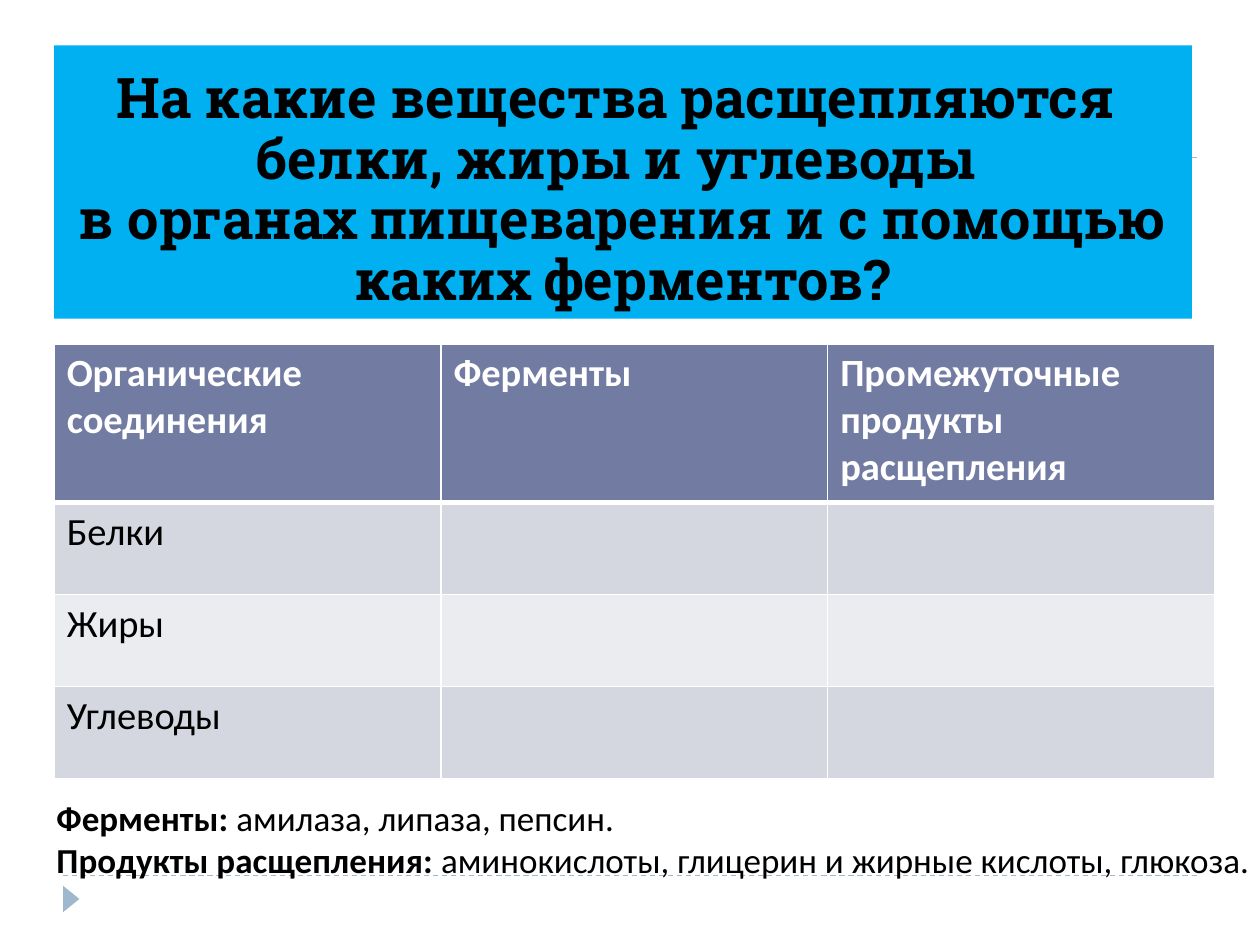
import dataclasses

import lxml.etree
import pptx
import pptx.dml.color
import pptx.enum.dml
import pptx.enum.shapes
import pptx.enum.text
import pptx.oxml.ns
import pptx.util

Inches = pptx.util.Inches
Shapes = pptx.enum.shapes.MSO_SHAPE

COLOURS = {
    "rule": "9FB8CD",
    "title": "00B0F0",
    "header": "727CA3",
    "odd row": "D5D7E0",
    "even row": "EBECF0",
    "white": "FFFFFF",
    "black": "000000",
}
WIDTH, HEIGHT = 10, 7.5
LEFT = 0.43
COLUMN_WIDTH = 3.07
ROW_HEIGHTS = (1.26, 0.73, 0.73, 0.73)
HEADINGS = ("Органические соединения", "Ферменты", "Промежуточные продукты расщепления")
NUTRIENTS = ("Белки", "Жиры", "Углеводы")
TITLE = (
    "На какие вещества расщепляются \v"
    "белки, жиры и углеводы \v"
    "в органах пищеварения и с помощью каких ферментов?"
)


@dataclasses.dataclass(frozen=True)
class Hint:
    label: str
    words: str


HINTS = (
    Hint("Ферменты: ", "амилаза, липаза, пепсин."),
    Hint("Продукты расщепления: ", "аминокислоты, глицерин и жирные кислоты, глюкоза."),
)


def colour(name: str) -> pptx.dml.color.RGBColor:
    return pptx.dml.color.RGBColor.from_string(COLOURS[name])


def style(span, size: float, bold: bool, ink: str = "black", face: str = "Calibri") -> None:
    span.font.name = face
    span.font.size = pptx.util.Pt(size)
    span.font.bold = bold
    span.font.color.rgb = colour(ink)


def add_rule(page, top: float) -> None:
    """Draw a dashed line across the page."""
    rule = page.shapes.add_connector(
        pptx.enum.shapes.MSO_CONNECTOR.STRAIGHT,
        Inches(0.05 * WIDTH), Inches(top), Inches(0.95 * WIDTH), Inches(top),
    )
    rule.line.color.rgb = colour("rule")
    rule.line.width = pptx.util.Pt(0.75)
    rule.line.dash_style = pptx.enum.dml.MSO_LINE.DASH
    properties = rule._element.spPr
    lxml.etree.SubElement(properties, pptx.oxml.ns.qn("a:effectLst"))


def add_block(page, kind, left: float, top: float, width: float, height: float, fill: str):
    """Add a flat shape without outline."""
    block = page.shapes.add_shape(kind, Inches(left), Inches(top), Inches(width), Inches(height))
    block.shadow.inherit = False
    block.fill.solid()
    block.fill.fore_color.rgb = colour(fill)
    block.line.fill.background()
    return block


def add_title(page) -> None:
    block = add_block(page, Shapes.RECTANGLE, LEFT, 0.36, 9.03, 2.17, "title")
    frame = block.text_frame
    frame.word_wrap = True
    frame.vertical_anchor = pptx.enum.text.MSO_ANCHOR.BOTTOM
    frame.text = TITLE
    paragraph = frame.paragraphs[0]
    paragraph.alignment = pptx.enum.text.PP_ALIGN.CENTER
    paragraph.line_spacing = 0.9
    for span in paragraph.runs:
        style(span, 32, True, face="Roboto Slab")


def set_borders(cell, bottom: float) -> None:
    """Give a cell white borders, 1 point wide except at the bottom."""
    properties = cell._tc.get_or_add_tcPr()
    widths = {"L": 1, "R": 1, "T": 1, "B": bottom}
    for position, (side, width) in enumerate(widths.items()):
        border = lxml.etree.Element(
            pptx.oxml.ns.qn(f"a:ln{side}"), w=str(pptx.util.Pt(width))
        )
        fill = lxml.etree.SubElement(border, pptx.oxml.ns.qn("a:solidFill"))
        lxml.etree.SubElement(fill, pptx.oxml.ns.qn("a:srgbClr"), val=COLOURS["white"])
        properties.insert(position, border)


def add_nutrient_table(page) -> None:
    rows = [HEADINGS] + [(name, "", "") for name in NUTRIENTS]
    table = page.shapes.add_table(
        len(rows), len(HEADINGS), Inches(LEFT), Inches(2.73),
        Inches(COLUMN_WIDTH * len(HEADINGS)), Inches(sum(ROW_HEIGHTS)),
    ).table
    for column in table.columns:
        column.width = Inches(COLUMN_WIDTH)
    for row, words in enumerate(rows):
        table.rows[row].height = Inches(ROW_HEIGHTS[row])
        header = row == 0
        fill = "header" if header else "odd row" if row % 2 else "even row"
        for column, text in enumerate(words):
            cell = table.cell(row, column)
            cell.fill.solid()
            cell.fill.fore_color.rgb = colour(fill)
            set_borders(cell, 3 if header else 1)
            if text:
                cell.text_frame.text = text
                span = cell.text_frame.paragraphs[0].runs[0]
                style(span, 22, header, "white" if header else "black")


def add_hints(page) -> None:
    box = page.shapes.add_textbox(Inches(0.35), Inches(6.27), Inches(9.94), Inches(0.77))
    frame = box.text_frame
    frame.word_wrap = False
    frame.auto_size = pptx.enum.text.MSO_AUTO_SIZE.SHAPE_TO_FIT_TEXT
    frame.text = "\n".join(hint.label for hint in HINTS)
    for paragraph, hint in zip(frame.paragraphs, HINTS):
        style(paragraph.runs[0], 20, True)
        span = paragraph.add_run()
        span.text = hint.words
        style(span, 20, False)


def main() -> None:
    deck = pptx.Presentation()
    deck.slide_width, deck.slide_height = Inches(WIDTH), Inches(HEIGHT)
    page = deck.slides.add_slide(deck.slide_layouts[6])
    for top in (6.95, 1.25):
        add_rule(page, top)
    marker = add_block(page, Shapes.ISOSCELES_TRIANGLE, 0.46, 7.07, 0.21, 0.13, "rule")
    marker.rotation = 90
    add_title(page)
    add_nutrient_table(page)
    add_hints(page)
    deck.save("out.pptx")


if __name__ == "__main__":
    main()
